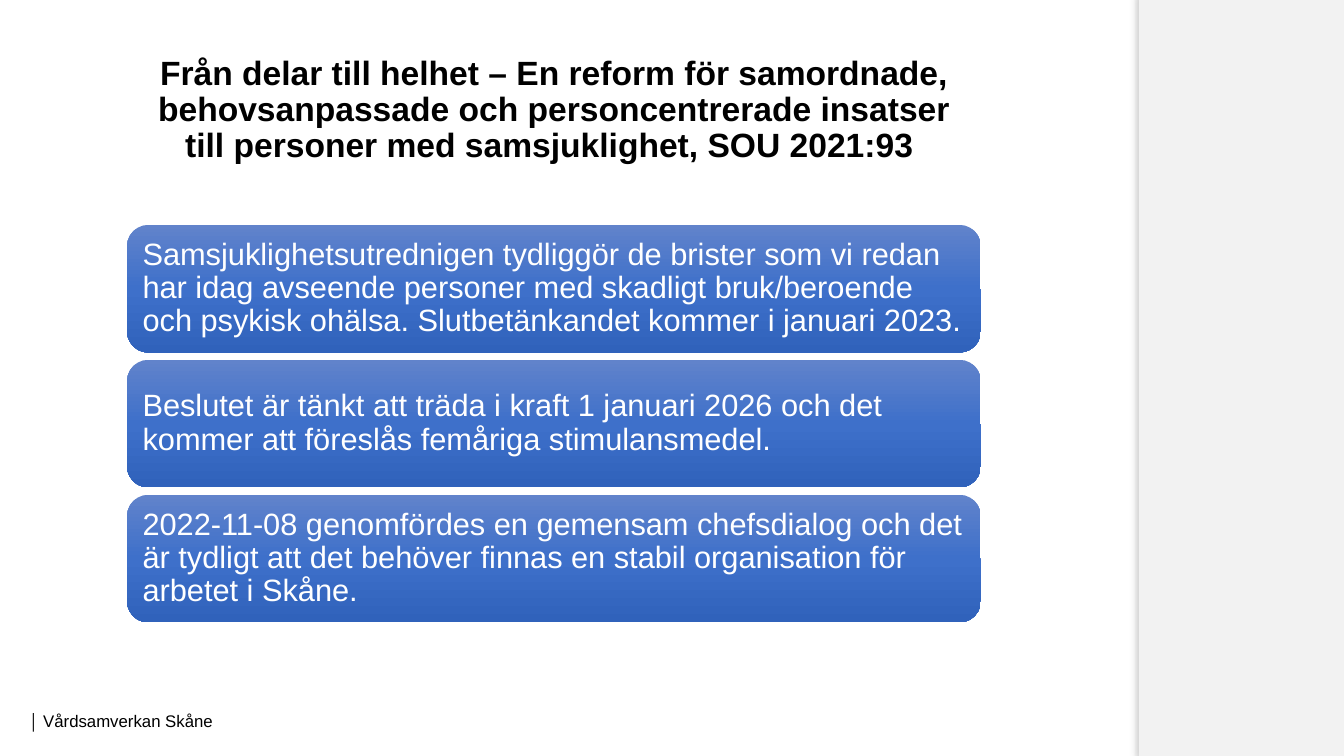
from copy import deepcopy

from lxml import etree
from pptx import Presentation
from pptx.dml.color import RGBColor
from pptx.enum.shapes import MSO_SHAPE
from pptx.enum.text import MSO_ANCHOR, MSO_AUTO_SIZE, PP_ALIGN
from pptx.oxml.ns import qn
from pptx.util import Pt

RECTANGLE = MSO_SHAPE.RECTANGLE
ROUNDED = MSO_SHAPE.ROUNDED_RECTANGLE
MIDDLE = MSO_ANCHOR.MIDDLE
NO_AUTOFIT = MSO_AUTO_SIZE.NONE
LEFT, CENTER = PP_ALIGN.LEFT, PP_ALIGN.CENTER

TITLE_ONLY_LAYOUT = 5
CONTENT_LEFT, CONTENT_WIDTH = 90.8, 609.8
CARD_TOP, CARD_HEIGHT, CARD_STEP = 160.6, 91.2, 96.4
CARD_GRADIENT = [(0, "6183CB"), (0.5, "3E70CA"), (1, "3062BB")]

TITLE = (
    "Från delar till helhet – En reform för samordnade, behovsanpassade och "
    "personcentrerade insatser till personer med samsjuklighet, SOU 2021:93 "
)
CARD_TEXTS = [
    "Samsjuklighetsutrednigen tydliggör de brister som vi redan har idag "
    "avseende personer med skadligt bruk/beroende och psykisk ohälsa. "
    "Slutbetänkandet kommer i januari 2023.",
    "Beslutet är tänkt att träda i kraft 1 januari 2026 och det kommer att "
    "föreslås femåriga stimulansmedel.",
    "2022-11-08 genomfördes en gemensam chefsdialog och det är tydligt att "
    "det behöver finnas en stabil organisation för arbetet i Skåne.",
]


def color(hex_value):
    return RGBColor.from_string(hex_value)


def add_text(paragraph, text, size, hex_value="000000", bold=False,
             align=LEFT, line_spacing=None):
    """Append one formatted run to a paragraph."""
    paragraph.alignment = align
    if line_spacing:
        paragraph.line_spacing = line_spacing
    run = paragraph.add_run()
    run.text = text
    run.font.name = "Arial"
    run.font.size = Pt(size)
    run.font.bold = bold
    run.font.color.rgb = color(hex_value)


def prepare_frame(shape):
    frame = shape.text_frame
    frame.word_wrap = True
    frame.auto_size = NO_AUTOFIT
    frame.vertical_anchor = MIDDLE
    return frame


def add_panel_shadow(shape, hex_value, alpha, blur, distance):
    """Add a soft shadow, moved to the right, around the shape."""
    shape.shadow.inherit = False
    effects = shape._element.spPr.find(qn("a:effectLst"))
    shadow = etree.SubElement(effects, qn("a:outerShdw"), blurRad=str(Pt(blur)),
                              dist=str(Pt(distance)), dir="0", rotWithShape="0")
    shade = etree.SubElement(shadow, qn("a:srgbClr"), val=hex_value)
    etree.SubElement(shade, qn("a:alpha"), val=str(alpha * 1000))


def add_side_panel(slide):
    panel = slide.shapes.add_shape(RECTANGLE, Pt(813.6), Pt(-7.2), Pt(146.9), Pt(552.2))
    panel.fill.solid()
    panel.fill.fore_color.rgb = color("F2F2F2")
    panel.line.fill.background()
    add_panel_shadow(panel, "000000", alpha=90, blur=11, distance=4)


def add_footer(slide):
    footer = slide.shapes.add_textbox(Pt(14), Pt(500.4), Pt(216), Pt(28.8))
    paragraph = prepare_frame(footer).paragraphs[0]
    add_text(paragraph, "│", 11, bold=True)
    add_text(paragraph, " ", 10.5)
    add_text(paragraph, "Vårdsamverkan Skåne", 12)


def format_title(slide):
    title = slide.shapes.title
    title.left, title.top = Pt(CONTENT_LEFT), Pt(45.6)
    title.width, title.height = Pt(CONTENT_WIDTH), Pt(67)
    paragraph = prepare_frame(title).paragraphs[0]
    add_text(paragraph, TITLE, 24, bold=True, align=CENTER, line_spacing=0.9)


def fill_gradient(shape, stops):
    """Fill the shape from top to bottom through the given stops."""
    shape.fill.gradient()
    shape.fill.gradient_angle = 270
    stop_list = shape._element.spPr.find(qn("a:gradFill")).find(qn("a:gsLst"))
    while len(stop_list) < len(stops):
        stop_list.append(deepcopy(stop_list[0]))
    for stop, (position, hex_value) in zip(shape.fill.gradient_stops, stops):
        stop.position = position
        stop.color.rgb = color(hex_value)


def add_card(slide, top, text):
    card = slide.shapes.add_shape(ROUNDED, Pt(CONTENT_LEFT), Pt(top),
                                  Pt(CONTENT_WIDTH), Pt(CARD_HEIGHT))
    card.shadow.inherit = False
    card.line.fill.background()
    fill_gradient(card, CARD_GRADIENT)
    frame = prepare_frame(card)
    frame.margin_left = frame.margin_right = Pt(6.6)
    frame.margin_top = frame.margin_bottom = Pt(6.6)
    add_text(frame.paragraphs[0], text, 22, "FFFFFF", line_spacing=0.9)


def main():
    presentation = Presentation()
    presentation.slide_width, presentation.slide_height = Pt(960), Pt(540)
    slide = presentation.slides.add_slide(presentation.slide_layouts[TITLE_ONLY_LAYOUT])

    # Frame of the page
    add_side_panel(slide)
    add_footer(slide)

    # Title and stacked cards
    format_title(slide)
    for index, text in enumerate(CARD_TEXTS):
        add_card(slide, CARD_TOP + index * CARD_STEP, text)

    presentation.save("out.pptx")


if __name__ == "__main__":
    main()
